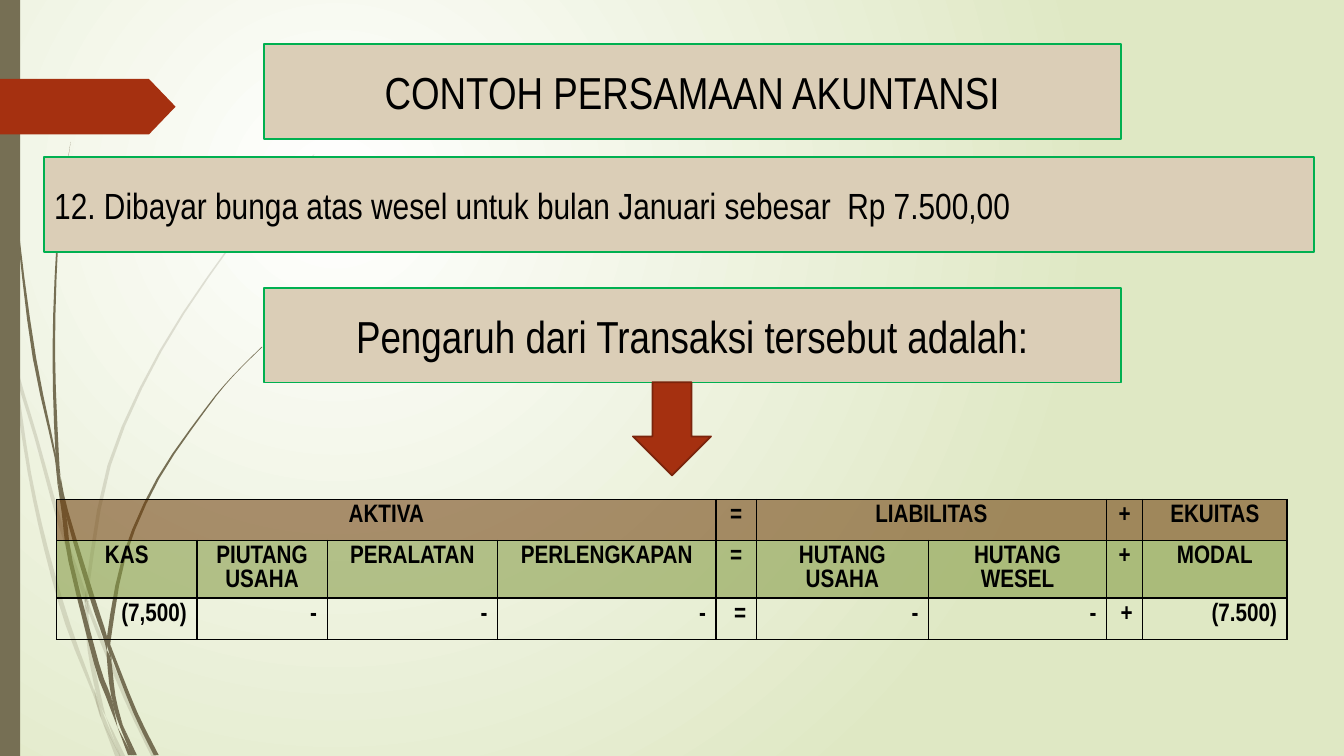
from dataclasses import dataclass

from lxml.etree import SubElement
from pptx import Presentation
from pptx.dml.color import RGBColor
from pptx.enum.shapes import MSO_SHAPE
from pptx.enum.text import MSO_ANCHOR, MSO_AUTO_SIZE, PP_ALIGN
from pptx.oxml.ns import qn
from pptx.util import Emu, Inches, Pt

COLUMNS, ROWS = 160, 90

# Grass blades: (column, row, thickness) along the middle of each piece
PALE_BLADES = [
    [(0, 34.9, 0.1), (0.7, 38.4, 0.4), (1.3, 42, 0.1)],
    [(1.3, 42, 0), (1.8, 45.1, 0.4), (3.5, 56.3, 0.4), (5.5, 65.4, 0.5), (8.1, 74.4, 0.6),
     (11.2, 82.6, 0.3), (12.1, 85.7, 0)],
    [(12.1, 85.7, 0), (14, 90, 0.6)],
    [(1.8, 41.4, 0), (2.2, 45, 0.4), (4.3, 52.1, 0.4), (7.2, 62.5, 0.5), (9.9, 70.3, 0.5),
     (10.1, 71.9, 0)],
    [(10.2, 70.3, 0), (10.3, 71.9, 0.4), (10.6, 73.2, 0)],
    [(10.6, 71.5, 0), (10.8, 73, 0.4), (15, 83.2, 0.5), (18.3, 90, 0.6)],
    [(37.4, 18.4, 0.1), (32.2, 23.7, 0.1), (27.4, 29.3, 0.2), (19.1, 41.8, 0.3),
     (13, 55.4, 0.4), (10.4, 70.1, 0.4), (10.6, 71.5, 0)],
    [(10.1, 71.9, 0), (10.3, 73, 0.4), (10.7, 77.5, 0.5), (11.8, 83, 0.5), (12.6, 85.3, 0)],
    [(12.6, 85.3, 0), (14.6, 90, 0.6)],
    [(11.2, 82, 0), (12.1, 85.1, 0.5), (14.3, 90, 0.1)],
]
DARK_BLADES = [
    [(0.4, 0, 0.1), (0.9, 13.2, 0.2), (2.2, 28, 0.2), (4.1, 42.6, 0.4), (6.6, 54.4, 0.2),
     (6.8, 57.7, 0)],
    [(7.2, 56.6, 0), (7.9, 60.8, 0.4), (10.9, 70.9, 0.6), (12.5, 75.8, 0.5), (12.7, 77.4, 0)],
    [(13.2, 76.9, 0), (13.5, 78.2, 0.4), (16.1, 84.8, 0.5), (18.6, 89.9, 0.6)],
    [(6.8, 57.2, 0), (7.6, 61, 0.5), (8.4, 66.8, 0.5), (11.5, 79, 0.6), (12.9, 82.9, 0.6),
     (14, 86.6, 0)],
    [(8.4, 16.9, 0), (7.5, 23.2, 0.1), (6.8, 29.4, 0.2), (6.4, 41.9, 0.3), (6.8, 54, 0.4),
     (7.2, 56.6, 0)],
    [(14.6, 86.3, 0), (16.1, 89.9, 0.4)],
    [(6.6, 53.9, 0), (7, 57, 0.4), (7.7, 60.6, 0)],
    [(31.2, 41.3, 0.1), (27.7, 44.8, 0.1), (24.5, 48.7, 0.2), (18.8, 57, 0.3),
     (14.8, 66.2, 0.4), (13, 75.8, 0.5), (13.2, 76.9, 0)],
    [(14, 86.6, 0), (15.5, 89.9, 0.5)],
    [(12.7, 77.4, 0), (13, 78.7, 0.5), (13.5, 82.9, 0.5), (14.6, 86.3, 0)],
    [(12.7, 75.7, 0), (13, 77, 0.4), (13.3, 78.7, 0)],
    [(13.2, 82.9, 0), (14.1, 85.5, 0.4), (15.8, 89.9, 0.3)],
]


@dataclass(frozen=True)
class Theme:
    font: str = "Arial Narrow"
    ink: str = "000000"
    glow: str = "FFFFFF"
    backdrop: str = "DFE8C4"
    stem: str = "766F54"
    accent: str = "A53010"
    accent_edge: str = "7A240C"
    box: str = "DBCEB7"
    box_edge: str = "00B050"
    group_row: str = "6F3F0C"
    account_row: str = "839943"
    heading_size: float = 32
    body_size: float = 26
    table_size: float = 18
    line_width: float = 1.25


def write_text(frame, text, *, theme, size, align=PP_ALIGN.LEFT, bold=False):
    frame.text = text
    paragraph = frame.paragraphs[0]
    paragraph.alignment = align
    paragraph.space_before = Pt(0)
    font = paragraph.runs[0].font
    font.name, font.size, font.bold = theme.font, Pt(size), bold
    font.color.rgb = RGBColor.from_string(theme.ink)
    return paragraph


def set_fill(fill, color):
    fill.solid()
    fill.fore_color.rgb = RGBColor.from_string(color)


def set_opacity(properties, opacity):
    color = properties.find(qn("a:solidFill")).find(qn("a:srgbClr"))
    SubElement(color, qn("a:alpha"), val=str(opacity * 1000))


def smooth_curve(points, steps=3):
    """Points along a curve that passes through every given point."""
    padded = [points[0], *points, points[-1]]
    curve = []
    for a, b, c, d in zip(padded, padded[1:], padded[2:], padded[3:]):
        for step in range(steps):
            t = step / steps
            curve.append(tuple(
                0.5 * (2 * q + (r - p) * t + (2 * p - 5 * q + 4 * r - s) * t ** 2
                       + (3 * q - p - 3 * r + s) * t ** 3)
                for p, q, r, s in zip(a, b, c, d)))
    return curve + [points[-1]]


class SlideBuilder:
    def __init__(self, presentation, theme):
        self.theme = theme
        self.column = presentation.slide_width / COLUMNS
        self.row = presentation.slide_height / ROWS
        self.slide = presentation.slides.add_slide(presentation.slide_layouts[1])

    def across(self, columns):
        return Emu(round(columns * self.column))

    def down(self, rows):
        return Emu(round(rows * self.row))

    def area(self, left, top, width, height):
        return self.across(left), self.down(top), self.across(width), self.down(height)

    def paint(self, shape, color, edge=None):
        set_fill(shape.fill, color)
        if edge:
            shape.line.color.rgb = RGBColor.from_string(edge)
            shape.line.width = Pt(self.theme.line_width)
        else:
            shape.line.fill.background()

    def background(self):
        fill = self.slide.background.fill
        fill.gradient()
        for stop, color in zip(fill.gradient_stops, (self.theme.glow, self.theme.backdrop)):
            stop.color.rgb = RGBColor.from_string(color)
        gradient = next(self.slide.element.iter(qn("a:gradFill")))
        gradient.remove(gradient.find(qn("a:lin")))
        circle = SubElement(gradient, qn("a:path"), path="circle")
        SubElement(circle, qn("a:fillToRect"), l="50000", t="50000", r="100000", b="100000")

    def blade(self, points, opacity):
        curve = smooth_curve(points)
        left = [(x - thickness / 2, y) for x, y, thickness in curve]
        right = [(x + thickness / 2, y) for x, y, thickness in curve]
        outline = [(self.across(x), self.down(y)) for x, y in left + right[::-1]]
        builder = self.slide.shapes.build_freeform(*outline[0])
        builder.add_line_segments(outline[1:], close=True)
        shape = builder.convert_to_shape()
        shape.shadow.inherit = False
        self.paint(shape, self.theme.stem)
        set_opacity(shape.element.spPr, opacity)

    def preset(self, kind, area, color, edge=None):
        shape = self.slide.shapes.add_shape(kind, *self.area(*area))
        shape.shadow.inherit = False
        self.paint(shape, color, edge)
        return shape

    def framed_text(self, shape, text, **text_format):
        self.paint(shape, self.theme.box, self.theme.box_edge)
        frame = shape.text_frame
        frame.word_wrap = True
        frame.auto_size = MSO_AUTO_SIZE.NONE
        frame.vertical_anchor = MSO_ANCHOR.MIDDLE
        return write_text(frame, text, theme=self.theme, **text_format)

    def placeholder(self, index, area, text, **text_format):
        shape = self.slide.placeholders[index]
        shape.left, shape.top, shape.width, shape.height = self.area(*area)
        self.slide.shapes.element.append(shape.element)  # bring to front
        return self.framed_text(shape, text, **text_format)

    def table(self, left, top, widths, heights, rows, fills, alignments, merges):
        area = self.area(left, top, sum(widths), sum(heights))
        table = self.slide.shapes.add_table(len(rows), len(widths), *area).table
        table.first_row = table.horz_banding = False
        for column, width in zip(table.columns, widths):
            column.width = self.across(width)
        for row, height in zip(table.rows, heights):
            row.height = self.down(height)
        for r, (texts, color, align) in enumerate(zip(rows, fills, alignments)):
            for c, text in enumerate(texts):
                self.cell(table.cell(r, c), text, color, align)
        for r, first, last in merges:
            table.cell(r, first).merge(table.cell(r, last))

    def cell(self, cell, text, color, align):
        if text:
            write_text(cell.text_frame, text, theme=self.theme, size=self.theme.table_size,
                       align=align, bold=True)
        properties = cell._tc.get_or_add_tcPr()
        if color:
            set_fill(cell.fill, color)
            set_opacity(properties, 57)
        else:
            cell.fill.background()
        for position, side in enumerate(("a:lnL", "a:lnR", "a:lnT", "a:lnB")):
            border = SubElement(properties, qn(side), w=str(Pt(1)))
            solid = SubElement(border, qn("a:solidFill"))
            SubElement(solid, qn("a:srgbClr"), val=self.theme.ink)
            properties.insert(position, border)


def main():
    presentation = Presentation()
    presentation.slide_width, presentation.slide_height = Inches(13.33), Inches(7.5)
    theme = Theme()
    builder = SlideBuilder(presentation, theme)

    # Backdrop with grass
    builder.background()
    for blades, opacity in ((PALE_BLADES, 20), (DARK_BLADES, 100)):
        for points in blades:
            builder.blade(points, opacity)

    # Side bar and tab
    builder.preset(MSO_SHAPE.RECTANGLE, (0, 0, 2.4, ROWS), theme.stem)
    tab = builder.preset(MSO_SHAPE.PENTAGON, (0, 9.4, 20.9, 6.6), theme.accent)
    tab.adjustments[0] = 0.48

    # Title, transaction and effect
    heading = {"size": theme.heading_size, "align": PP_ALIGN.CENTER}
    builder.placeholder(0, (31.45, 5.25, 102, 11.3), "CONTOH PERSAMAAN AKUNTANSI", **heading)
    transaction = builder.placeholder(
        1, (5.25, 18.7, 151.2, 11.3),
        "12. Dibayar bunga atas wesel untuk bulan Januari sebesar  Rp 7.500,00",
        size=theme.body_size)
    properties = transaction._p.get_or_add_pPr()
    properties.set("marL", str(Inches(0.39)))
    properties.set("indent", str(-Inches(0.39)))
    SubElement(properties, qn("a:buNone"))
    effect = builder.preset(MSO_SHAPE.RECTANGLE, (31.45, 34.25, 102, 11.3), theme.box)
    builder.framed_text(effect, "Pengaruh dari Transaksi tersebut adalah:", **heading)
    builder.preset(MSO_SHAPE.DOWN_ARROW, (75.35, 45.5, 9.3, 11.1), theme.accent, theme.accent_edge)

    # Accounting equation
    builder.table(
        6.75, 59.45,
        widths=[16.7, 15.5, 20.3, 26, 4.8, 20.5, 21.2, 4.3, 17.2],
        heights=[4.9, 6.75, 4.9],
        rows=[
            ["AKTIVA", "", "", "", "=", "LIABILITAS", "", "+", "EKUITAS"],
            ["KAS", "PIUTANG USAHA", "PERALATAN", "PERLENGKAPAN", "=",
             "HUTANG USAHA", "HUTANG WESEL", "+", "MODAL"],
            ["(7,500)", "-", "-", "-", "=", "-", "-", "+", "(7.500)"],
        ],
        fills=[theme.group_row, theme.account_row, None],
        alignments=[PP_ALIGN.CENTER, PP_ALIGN.CENTER, PP_ALIGN.RIGHT],
        merges=[(0, 0, 3), (0, 5, 6)])

    presentation.save("out.pptx")


if __name__ == "__main__":
    main()
